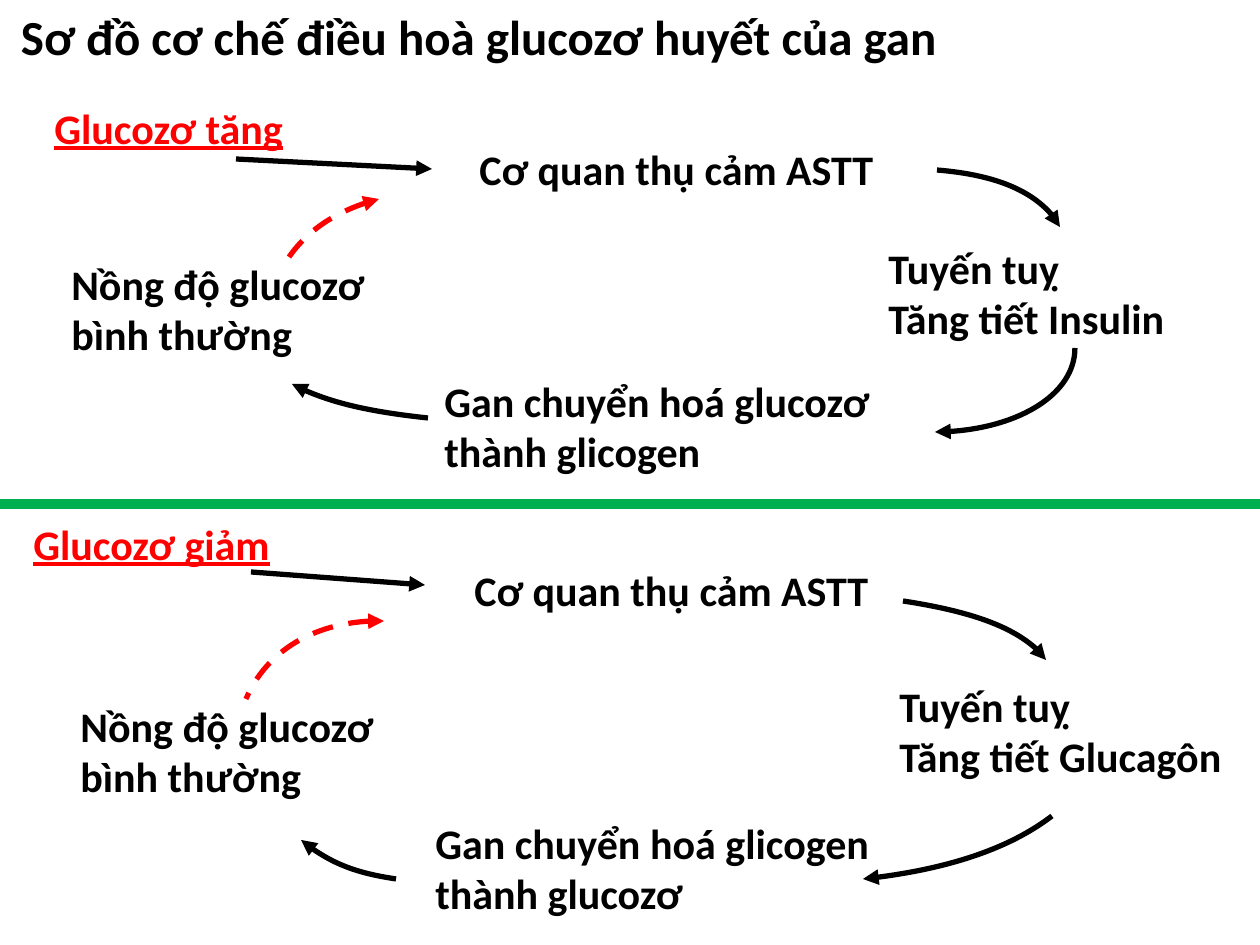
import pptx
import pptx.dml.color
import pptx.enum.dml
import pptx.enum.shapes
import pptx.enum.text
import pptx.oxml
import pptx.oxml.ns
import pptx.util

EMU_PER_PX = 914400 / 126
FONT = "Calibri"
COLORS = {"ink": "000000", "alert": "FF0000", "divider": "00B050"}

# Labels: text, box in px, color, wraps. Curves: Bezier points, arrow end, color.
RISING = {
    "labels": [
        ("Glucozơ tăng", (42, 96, 260, 63), "alert", True),
        ("Cơ quan thụ cảm ASTT", (467, 137, 423, 63), "ink", False),
        ("Tuyến tuỵ\nTăng tiết Insulin", (876, 236, 305, 115), "ink", False),
        ("Gan chuyển hoá glucozơ thành glicogen", (432, 369, 454, 115), "ink", True),
        ("Nồng độ glucozơ bình thường", (59, 252, 378, 115), "ink", True),
    ],
    "stimulus": ((236, 159), (432, 169)),
    "curves": [
        ([(937, 170), (998, 175), (1046, 198), (1060, 227)], "tailEnd", "ink"),
        ([(935, 432), (1012, 432), (1075, 394), (1075, 348)], "headEnd", "ink"),
        ([(428, 418), (372, 412), (323, 401), (292, 384)], "tailEnd", "ink"),
        ([(379, 199), (335, 210), (299, 237), (281, 270)], "headEnd", "alert"),
    ],
}
FALLING = {
    "labels": [
        ("Glucozơ giảm", (21, 512, 268, 63), "alert", True),
        ("Cơ quan thụ cảm ASTT", (462, 558, 423, 63), "ink", False),
        ("Tuyến tuỵ\nTăng tiết Glucagôn", (887, 674, 350, 115), "ink", False),
        ("Gan chuyển hoá glicogen thành glucozơ", (423, 811, 501, 115), "ink", True),
        ("Nồng độ glucozơ bình thường", (68, 694, 377, 115), "ink", True),
    ],
    "stimulus": ((251, 572), (425, 585)),
    "curves": [
        ([(903, 601), (975, 612), (1029, 634), (1046, 660)], "tailEnd", "ink"),
        ([(863, 879), (940, 871), (1009, 849), (1052, 816)], "headEnd", "ink"),
        ([(396, 879), (355, 873), (323, 859), (301, 840)], "tailEnd", "ink"),
        ([(384, 621), (323, 619), (267, 650), (246, 699)], "headEnd", "alert"),
    ],
}


def px(length):
    return pptx.util.Emu(round(length * EMU_PER_PX))


def rgb(name):
    return pptx.dml.color.RGBColor.from_string(COLORS[name])


def write_text(frame, text, size, color, underline=None):
    frame.text = text
    frame.vertical_anchor = pptx.enum.text.MSO_ANCHOR.TOP
    for paragraph in frame.paragraphs:
        paragraph.alignment = pptx.enum.text.PP_ALIGN.LEFT
        font = paragraph.font
        font.name = FONT
        font.size = pptx.util.Pt(size)
        font.bold = True
        font.underline = underline
        font.color.rgb = rgb(color)


def set_title(slide, text):
    title = slide.shapes.title
    title.left, title.top, title.width, title.height = map(px, (0, 0, 1239, 72))
    frame = title.text_frame
    frame.auto_size = pptx.enum.text.MSO_AUTO_SIZE.NONE
    frame.margin_left = px(21)
    write_text(frame, text, 28, "ink")


def add_label(shapes, text, box, color, wraps):
    frame = shapes.add_textbox(*map(px, box)).text_frame
    frame.word_wrap = wraps
    write_text(frame, text, 24, color, underline=color == "alert" or None)


def style_line(shape, color, width):
    shape.line.color.rgb = rgb(color)
    shape.line.width = pptx.util.Pt(width)


def add_arrowhead(shape, end):
    outline = shape.element.spPr.find(pptx.oxml.ns.qn("a:ln"))
    namespace = pptx.oxml.ns.nsdecls("a")
    outline.append(pptx.oxml.parse_xml(f'<a:{end} {namespace} type="triangle"/>'))


def add_line(shapes, start, end, color, width):
    line = shapes.add_connector(
        pptx.enum.shapes.MSO_CONNECTOR.STRAIGHT, *map(px, start + end))
    style_line(line, color, width)
    line.element.spPr.append(
        pptx.oxml.parse_xml(f'<a:effectLst {pptx.oxml.ns.nsdecls("a")}/>'))
    return line


def add_stimulus_arrow(shapes, start, end):
    arrow = add_line(shapes, start, end, "ink", 3)
    outline = arrow.element.spPr.find(pptx.oxml.ns.qn("a:ln"))
    add_arrowhead(arrow, "tailEnd")
    assert outline is not None


def add_curve(shapes, points, arrow_end, color):
    """Draw one cubic Bezier; the freeform's three segments become its points."""
    builder = shapes.build_freeform(*points[0], scale=EMU_PER_PX)
    builder.add_line_segments(points[1:], close=False)
    curve = builder.convert_to_shape()
    outline_path = next(curve.element.iter(pptx.oxml.ns.qn("a:path")))
    bezier = pptx.oxml.parse_xml(f'<a:cubicBezTo {pptx.oxml.ns.nsdecls("a")}/>')
    for segment in outline_path.findall(pptx.oxml.ns.qn("a:lnTo")):
        bezier.append(segment[0])
        outline_path.remove(segment)
    outline_path.append(bezier)
    curve.shadow.inherit = False
    curve.fill.background()
    style_line(curve, color, 3)
    if color == "alert":
        curve.line.dash_style = pptx.enum.dml.MSO_LINE.DASH
    add_arrowhead(curve, arrow_end)


def add_cycle(slide, cycle):
    shapes = slide.shapes.add_group_shape().shapes
    for label in cycle["labels"]:
        add_label(shapes, *label)
    add_stimulus_arrow(shapes, *cycle["stimulus"])
    for curve in cycle["curves"]:
        add_curve(shapes, *curve)


def main():
    deck = pptx.Presentation()
    deck.slide_width, deck.slide_height = px(1260), px(945)
    slide = deck.slides.add_slide(deck.slide_layouts.get_by_name("Title Only"))
    set_title(slide, "Sơ đồ cơ chế điều hoà glucozơ huyết của gan")
    for cycle in (RISING, FALLING):
        add_cycle(slide, cycle)
    add_line(slide.shapes, (0, 504), (1260, 504), "divider", 6)
    deck.save("out.pptx")


if __name__ == "__main__":
    main()
